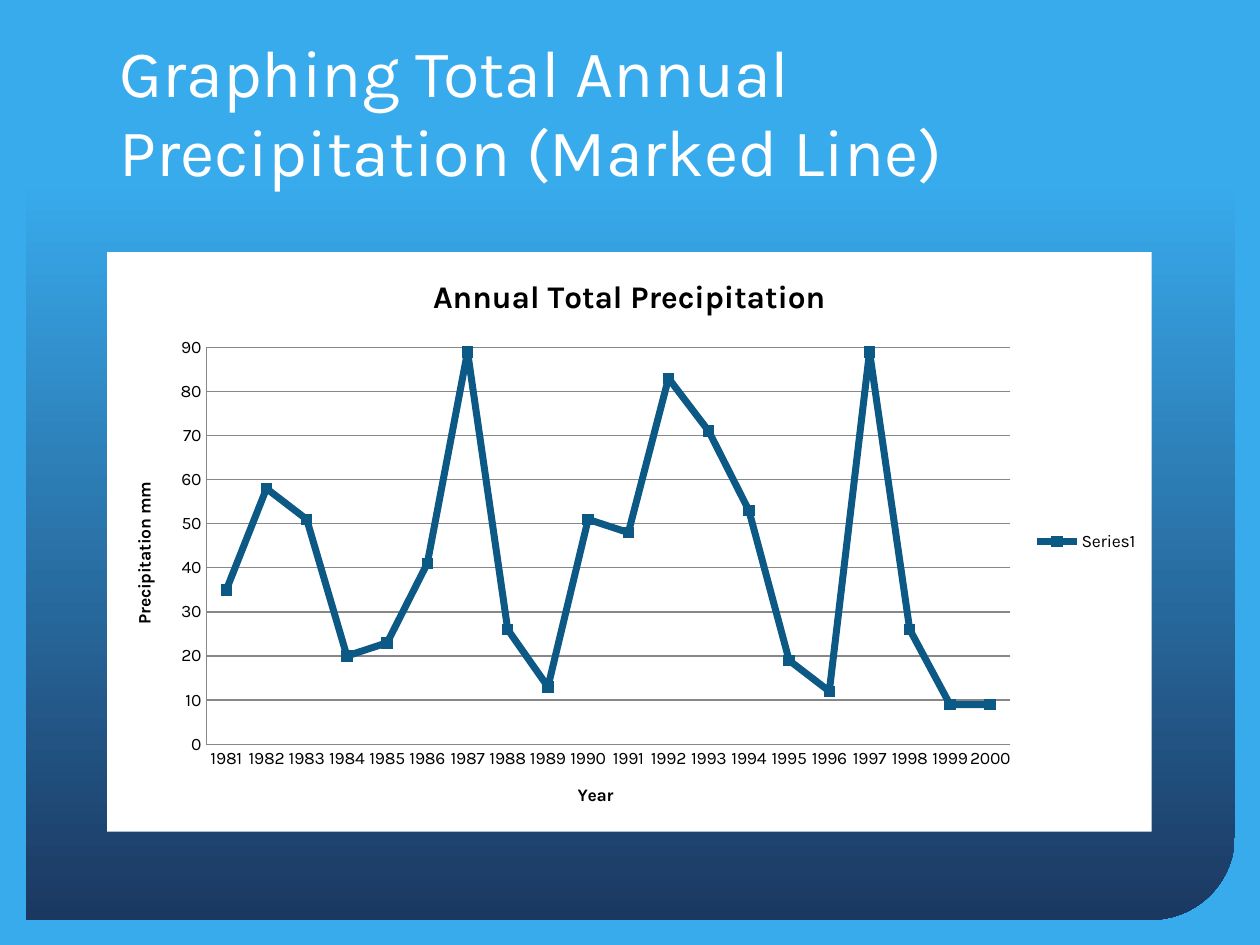
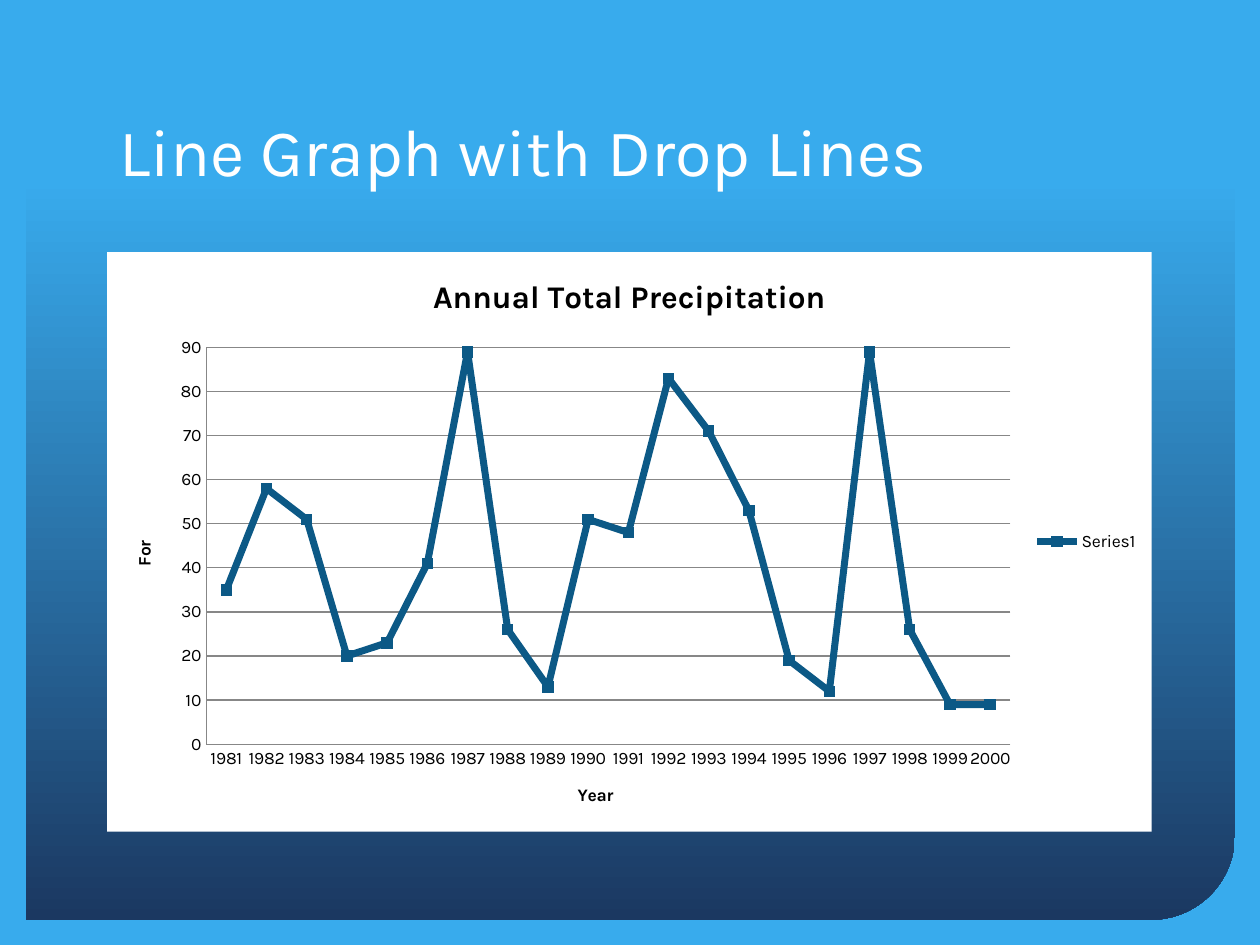
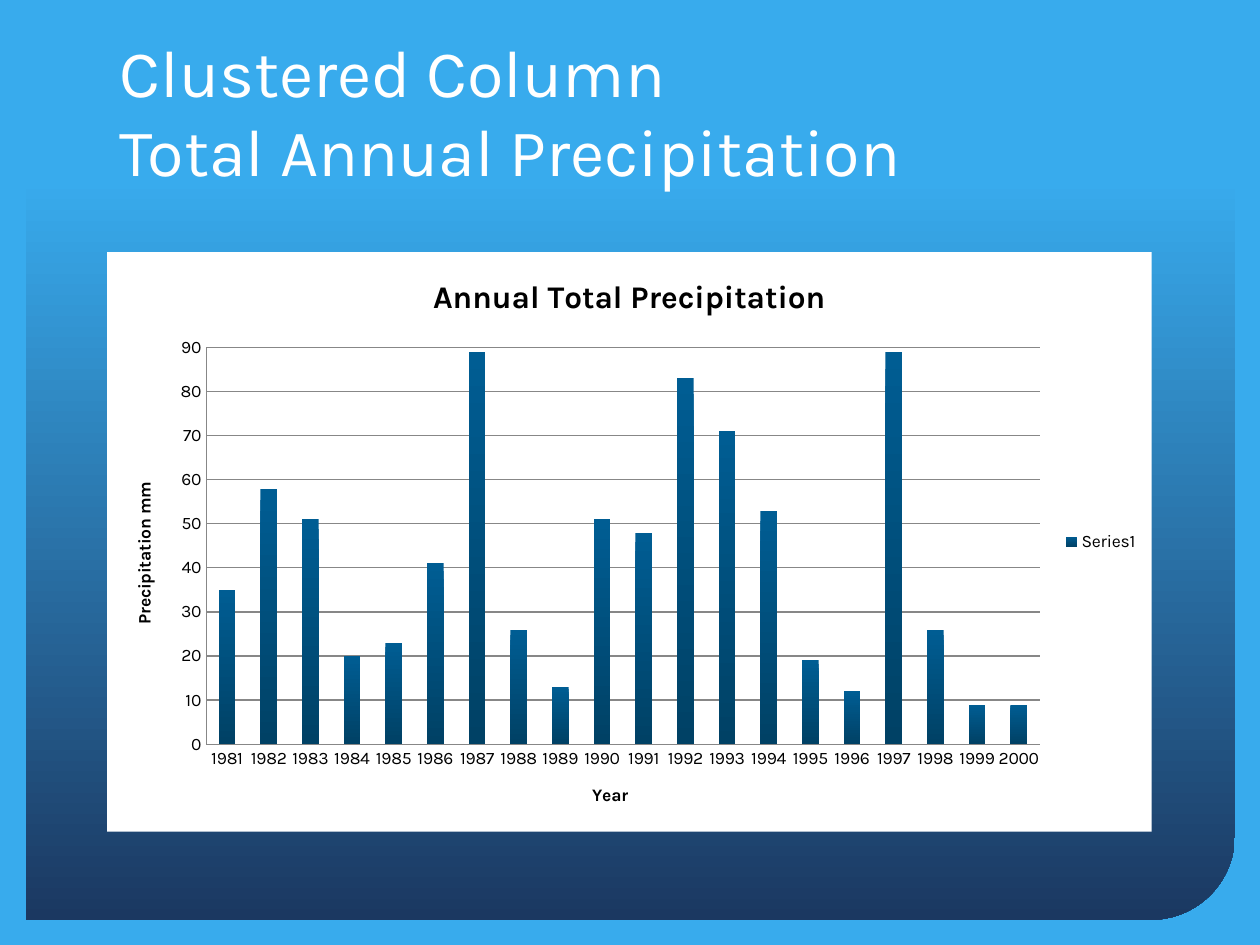
from dataclasses import dataclass

from lxml.etree import fromstring
from pptx import Presentation
from pptx.chart.data import CategoryChartData
from pptx.dml.color import RGBColor
from pptx.enum.chart import XL_CHART_TYPE, XL_LEGEND_POSITION, XL_MARKER_STYLE, XL_TICK_MARK
from pptx.enum.shapes import MSO_SHAPE
from pptx.enum.text import MSO_ANCHOR, MSO_AUTO_SIZE, PP_ALIGN
from pptx.util import Inches, Pt


@dataclass(frozen=True)
class Theme:
    font: str = "Karla"
    sky: str = "38ABED"
    navy: str = "1B3861"
    white: str = "FFFFFF"
    black: str = "000000"
    grid: str = "878787"
    series: str = "0C5986"
    column_top: str = "005D93"
    column_bottom: str = "004165"
    title_size: int = 38
    chart_title_size: int = 18
    label_size: int = 10
    line_width: float = 4
    grid_width: float = 0.75
    marker_size: int = 6


YEARS = [str(year) for year in range(1981, 2001)]
PRECIPITATION = [35, 58, 51, 20, 23, 41, 89, 26, 13, 51, 48, 83, 71, 53, 19, 12, 89, 26, 9, 9]

SLIDES = [
    ("Graphing Total Annual Precipitation (Marked Line)", XL_CHART_TYPE.LINE_MARKERS_STACKED, "Precipitation mm"),
    ("Line Graph with Drop Lines", XL_CHART_TYPE.LINE_MARKERS, "For"),
    ("Clustered Column \vTotal Annual Precipitation", XL_CHART_TYPE.COLUMN_CLUSTERED, "Precipitation mm"),
]

CHART_FILL = (
    '<c:spPr xmlns:c="http://schemas.openxmlformats.org/drawingml/2006/chart" '
    'xmlns:a="http://schemas.openxmlformats.org/drawingml/2006/main">'
    '<a:solidFill><a:srgbClr val="{}"/></a:solidFill><a:ln><a:noFill/></a:ln></c:spPr>'
)


def apply(target, values):
    for name, value in values.items():
        setattr(target, name, value)


class PrecipitationDeck:
    def __init__(self, theme):
        self.theme = theme
        self.deck = Presentation()
        apply(self.deck, {"slide_width": Inches(10), "slide_height": Inches(7.5)})
        self.paint(self.deck.slide_master.background.fill, theme.sky)
        self.page = None

    def paint(self, fill, color):
        fill.solid()
        fill.fore_color.rgb = RGBColor.from_string(color)

    def shade(self, fill, stops):
        fill.gradient()
        fill.gradient_angle = 270
        for stop, (position, color) in zip(fill.gradient_stops, stops):
            stop.position = position
            stop.color.rgb = RGBColor.from_string(color)

    def stroke(self, line, color, width):
        line.width = Pt(width)
        self.paint(line.fill, color)

    def style(self, font, size, color, bold=False):
        apply(font, {"name": self.theme.font, "size": Pt(size), "bold": bold})
        font.color.rgb = RGBColor.from_string(color)

    def add_page(self):
        self.page = self.deck.slides.add_slide(self.deck.slide_layouts[5])
        if len(self.deck.slides) == 1:
            self.add_master_panel()

    def add_master_panel(self):
        panel = self.page.shapes.add_shape(
            MSO_SHAPE.ROUND_2_DIAG_RECTANGLE, Inches(0.21), Inches(0.21), Inches(9.59), Inches(7.09)
        )
        panel.adjustments[0] = 0.094
        panel.adjustments[1] = 0
        panel.shadow.inherit = False
        panel.line.fill.background()
        self.shade(panel.fill, [(0.17, self.theme.sky), (1, self.theme.navy)])
        self.deck.slide_master.shapes.element.insert(2, panel.element)

    def add_title(self, text):
        box = self.page.shapes.title
        apply(box, {"left": Inches(0.85), "top": Inches(0.42), "width": Inches(8.29), "height": Inches(1.14)})
        frame = box.text_frame
        frame.text = text
        apply(frame, {"word_wrap": True, "auto_size": MSO_AUTO_SIZE.NONE, "vertical_anchor": MSO_ANCHOR.BOTTOM})
        para = frame.paragraphs[0]
        para.alignment = PP_ALIGN.LEFT
        for span in para.runs:
            self.style(span.font, self.theme.title_size, self.theme.white)

    def add_chart_heading(self, heading, text, size):
        heading.text_frame.text = text
        span = heading.text_frame.paragraphs[0].runs[0]
        self.style(span.font, size, self.theme.black, bold=True)

    def format_axis(self, axis, title):
        apply(axis, {"major_tick_mark": XL_TICK_MARK.NONE, "minor_tick_mark": XL_TICK_MARK.NONE})
        self.stroke(axis.format.line, self.theme.grid, self.theme.grid_width)
        self.add_chart_heading(axis.axis_title, title, self.theme.label_size)

    def format_line_series(self, series):
        series.smooth = False
        self.stroke(series.format.line, self.theme.series, self.theme.line_width)
        apply(series.marker, {"style": XL_MARKER_STYLE.SQUARE, "size": self.theme.marker_size})
        self.paint(series.marker.format.fill, self.theme.series)
        self.stroke(series.marker.format.line, self.theme.series, self.theme.grid_width)

    def add_precipitation_chart(self, kind, value_title):
        theme = self.theme
        data = CategoryChartData()
        data.categories = YEARS
        data.add_series("Series1", PRECIPITATION)
        chart = self.page.shapes.add_chart(
            kind, Inches(0.85), Inches(2), Inches(8.29), Inches(4.6), data
        ).chart
        self.style(chart.font, theme.label_size, theme.black)
        text_properties = chart.element.find("{*}txPr")
        text_properties.addprevious(fromstring(CHART_FILL.format(theme.white)))

        self.add_chart_heading(chart.chart_title, "Annual Total Precipitation", theme.chart_title_size)
        chart.has_legend = True
        apply(chart.legend, {"position": XL_LEGEND_POSITION.RIGHT, "include_in_layout": False})

        self.format_axis(chart.category_axis, "Year")
        self.format_axis(chart.value_axis, value_title)
        apply(chart.value_axis, {
            "minimum_scale": 0, "maximum_scale": 90, "major_unit": 10, "has_major_gridlines": True,
        })
        self.stroke(chart.value_axis.major_gridlines.format.line, theme.grid, theme.grid_width)

        plot = chart.plots[0]
        plot.vary_by_categories = False
        series = plot.series[0]
        if kind == XL_CHART_TYPE.COLUMN_CLUSTERED:
            plot.gap_width = 150
            self.shade(series.format.fill, [(0, theme.column_top), (1, theme.column_bottom)])
        else:
            self.format_line_series(series)


def main():
    builder = PrecipitationDeck(Theme())
    for title, kind, value_title in SLIDES:
        builder.add_page()
        builder.add_title(title)
        builder.add_precipitation_chart(kind, value_title)
    builder.deck.save("out.pptx")


if __name__ == "__main__":
    main()
